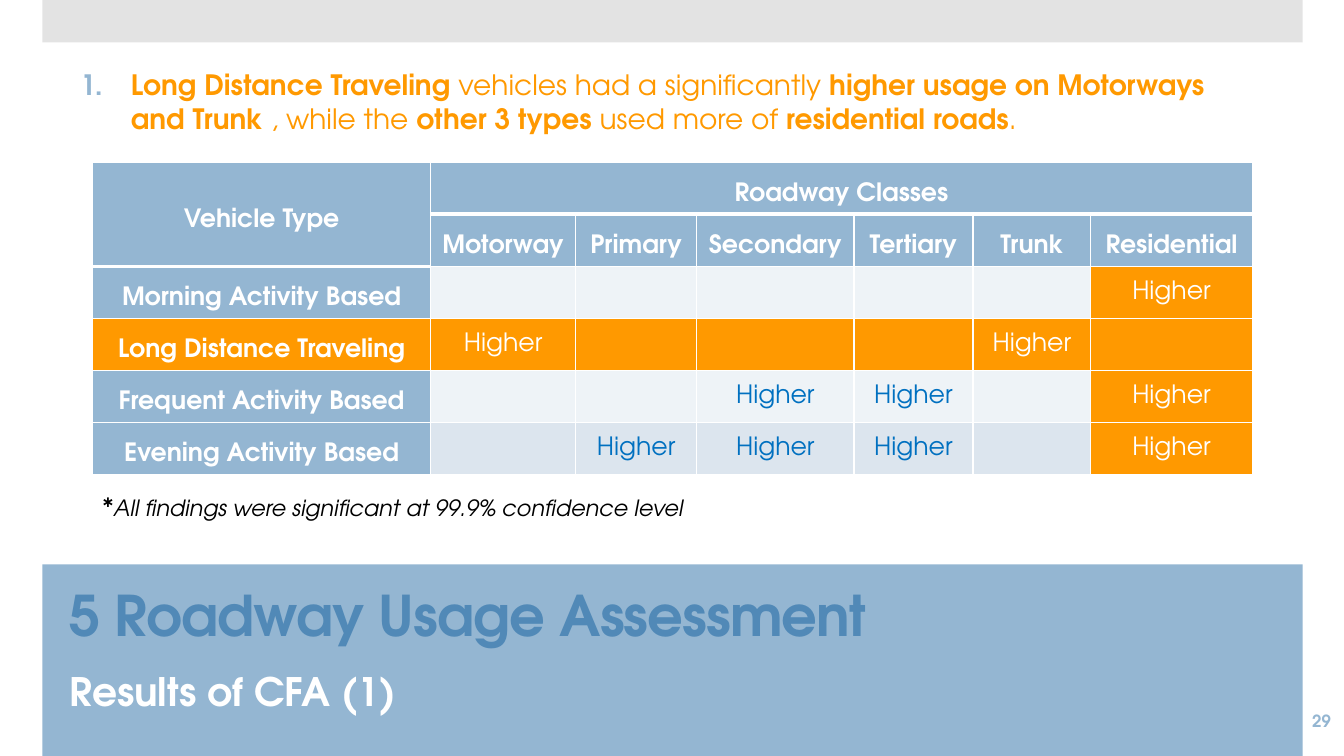
from dataclasses import dataclass

from lxml import etree
from pptx import Presentation
from pptx import util as u
from pptx.dml.color import RGBColor
from pptx.enum import shapes, text
from pptx.oxml.ns import qn


@dataclass(frozen=True)
class Theme:
    """Colours, font and type sizes of the deck."""
    font: str = "TeX Gyre Adventor"
    blue: str = "94B6D2"
    title_blue: str = "5189B7"
    value_blue: str = "0070C0"
    orange: str = "FF9900"
    grey: str = "C8C8C8"
    white: str = "FFFFFF"
    black: str = "000000"
    pale: str = "EEF3F7"
    pale_dark: str = "DCE5EE"
    title: float = 40
    subtitle: float = 28
    finding: float = 20
    table: float = 18
    note: float = 16
    page: float = 12


THEME = Theme()
LEFT, RIGHT = text.PP_ALIGN.LEFT, text.PP_ALIGN.RIGHT
CENTER = text.PP_ALIGN.CENTER
TOP, MIDDLE = text.MSO_ANCHOR.TOP, text.MSO_ANCHOR.MIDDLE

FINDING = [
    ("Long Distance Traveling ", True),
    ("vehicles had a significantly ", False),
    ("higher usage on Motorways and Trunk", True),
    (" , while the ", False),
    ("other 3 types ", True),
    ("used more of ", False),
    ("residential roads", True),
    (".", False),
]
ROAD_CLASSES = ["Motorway", "Primary", "Secondary", "Tertiary", "Trunk", "Residential"]
HIGHER_USAGE = {
    "Morning Activity Based": {"Residential"},
    "Long Distance Traveling": {"Motorway", "Trunk"},
    "Frequent Activity Based": {"Secondary", "Tertiary", "Residential"},
    "Evening Activity Based": {"Primary", "Secondary", "Tertiary", "Residential"},
}
COLUMN_WIDTHS = [3.35, 1.44, 1.2, 1.56, 1.18, 1.17, 1.6]


def inches(box):
    """Convert a box of numbers to lengths."""
    return [u.Inches(length) for length in box]


def style_run(run, size, color, bold=False, italic=False):
    """Format one run in the theme font."""
    run.font.name = THEME.font
    run.font.size = u.Pt(size)
    run.font.color.rgb = RGBColor.from_string(color)
    run.font.bold = bold
    run.font.italic = italic


def add_label(slide, box, anchor=TOP, wrap=True):
    """Add an empty text box and return its frame."""
    frame = slide.shapes.add_textbox(*inches(box)).text_frame
    frame.word_wrap = wrap
    frame.vertical_anchor = anchor
    return frame


def add_band(slide, box, color, opacity=100):
    """Draw a plain horizontal band."""
    band = slide.shapes.add_shape(shapes.MSO_SHAPE.RECTANGLE, *inches(box))
    band.shadow.inherit = False
    band.line.fill.background()
    band.fill.solid()
    band.fill.fore_color.rgb = RGBColor.from_string(color)
    if opacity < 100:
        tint = band.element.spPr.find(qn("a:solidFill"))[0]
        etree.SubElement(tint, qn("a:alpha"), val=str(opacity * 1000))


def add_heading(slide, box):
    """Place the slide title and its subtitle on the lower band."""
    left, top, width, height = box
    add_band(slide, box, THEME.blue)
    title = slide.shapes.title
    slide.shapes.element.append(title.element)
    title.left, title.top, title.width, title.height = inches(
        (left + 0.17, top + 0.02, width - 0.57, 1.03))
    frame = title.text_frame
    frame.text = "5 Roadway Usage Assessment"
    frame.auto_size = text.MSO_AUTO_SIZE.NONE
    frame.vertical_anchor = MIDDLE
    heading = frame.paragraphs[0]
    heading.alignment = LEFT
    heading.line_spacing = 0.9
    style_run(heading.runs[0], THEME.title, THEME.title_blue, bold=True)
    heading.runs[0].font._element.set("spc", "-60")

    subtitle = add_label(slide, (left + 0.17, top + 0.97, 3.47, 0.57), wrap=False)
    subtitle.text = "Results of CFA (1)"
    style_run(subtitle.paragraphs[0].runs[0], THEME.subtitle, THEME.white, bold=True)


def add_finding(slide, box):
    """Write the numbered finding with its emphasised phrases."""
    frame = add_label(slide, box)
    frame.margin_top = u.Inches(0.14)
    finding = frame.paragraphs[0]
    for phrase, bold in FINDING:
        run = finding.add_run()
        run.text = phrase
        style_run(run, THEME.finding, THEME.orange, bold)
    numbering = finding._p.get_or_add_pPr()
    numbering.set("marL", str(u.Inches(0.5)))
    numbering.set("indent", str(u.Inches(-0.5)))
    color = etree.SubElement(numbering, qn("a:buClr"))
    etree.SubElement(color, qn("a:srgbClr"), val=THEME.blue)
    etree.SubElement(numbering, qn("a:buFont"), typeface=THEME.font)
    etree.SubElement(numbering, qn("a:buAutoNum"), type="arabicPeriod")


def rule_width(row, column):
    """Give the width of the rule below a cell in points."""
    return 3 if row == 0 or (row == 1 and column == 0) else 1


def fill_cell(table, row, column, words, fill, color, heading=False):
    """Fill, rule and label one table cell."""
    cell = table.cell(row, column)
    properties = cell._tc.get_or_add_tcPr()
    widths = {"L": 1, "R": 1, "T": rule_width(row - 1, column), "B": rule_width(row, column)}
    for side, width in widths.items():
        rule = etree.SubElement(properties, qn(f"a:ln{side}"), w=str(u.Pt(width)))
        paint = etree.SubElement(rule, qn("a:solidFill"))
        etree.SubElement(paint, qn("a:srgbClr"), val=THEME.white)
    cell.fill.solid()
    cell.fill.fore_color.rgb = RGBColor.from_string(fill)
    cell.vertical_anchor = MIDDLE
    cell.margin_left = cell.margin_right = u.Inches(0.07)
    cell.margin_top = cell.margin_bottom = 0
    if words:
        cell.text = words
        label = cell.text_frame.paragraphs[0]
        label.alignment = CENTER
        label.line_spacing = 1.5 if heading else 1.0
        style_run(label.runs[0], THEME.table, color, bold=heading)


def add_usage_table(slide, box):
    """Build the table of vehicle types against roadway classes."""
    table = slide.shapes.add_table(
        len(HIGHER_USAGE) + 2, len(COLUMN_WIDTHS), *inches(box)).table
    table.first_row = table.horz_banding = False
    for column, width in zip(table.columns, COLUMN_WIDTHS):
        column.width = u.Inches(width)
    for row in table.rows:
        row.height = u.Inches(box[3] / len(table.rows))

    headings = [["Vehicle Type", "Roadway Classes"] + [""] * 5, [""] + ROAD_CLASSES]
    for row, names in enumerate(headings):
        for column, name in enumerate(names):
            fill_cell(table, row, column, name, THEME.blue, THEME.white, heading=True)
    table.cell(0, 0).merge(table.cell(1, 0))
    table.cell(0, 1).merge(table.cell(0, len(ROAD_CLASSES)))

    last_row = len(table.rows) - 1
    for row, (vehicle, higher) in enumerate(HIGHER_USAGE.items(), start=2):
        long_distance = vehicle == "Long Distance Traveling"
        vehicle_fill = THEME.orange if long_distance else THEME.blue
        fill_cell(table, row, 0, vehicle, vehicle_fill, THEME.white, heading=True)
        for column, road in enumerate(ROAD_CLASSES, start=1):
            highlighted = long_distance or road == "Residential"
            plain = THEME.pale_dark if row == last_row else THEME.pale
            fill_cell(table, row, column, "Higher" if road in higher else "",
                      THEME.orange if highlighted else plain,
                      THEME.white if highlighted else THEME.value_blue)


def add_note(slide, box):
    """Write the confidence note below the table."""
    note = add_label(slide, box, wrap=False).paragraphs[0]
    for words, size in (("*", THEME.table),
                        ("All findings were significant at 99.9% confidence level", THEME.note)):
        run = note.add_run()
        run.text = words
        style_run(run, size, THEME.black, italic=True)


def add_page_number(slide, box):
    """Write the page number in the corner."""
    number = add_label(slide, box, MIDDLE).paragraphs[0]
    number.text = "29"
    number.alignment = RIGHT
    style_run(number.runs[0], THEME.page, THEME.blue, bold=True)


def main():
    """Assemble and save the slide."""
    deck = Presentation()
    deck.slide_width, deck.slide_height = inches((13.33, 7.5))
    slide = deck.slides.add_slide(deck.slide_layouts[5])
    add_band(slide, (0.42, 0, 12.5, 0.42), THEME.grey, opacity=50)
    add_heading(slide, (0.42, 5.6, 12.5, 1.9))
    add_finding(slide, (0.7, 0.53, 11.93, 1.0))
    add_usage_table(slide, (0.92, 1.61, 11.5, 3.1))
    add_note(slide, (0.92, 4.83, 6.08, 0.4))
    add_page_number(slide, (11.63, 6.95, 1.67, 0.4))
    deck.save("out.pptx")


if __name__ == "__main__":
    main()
